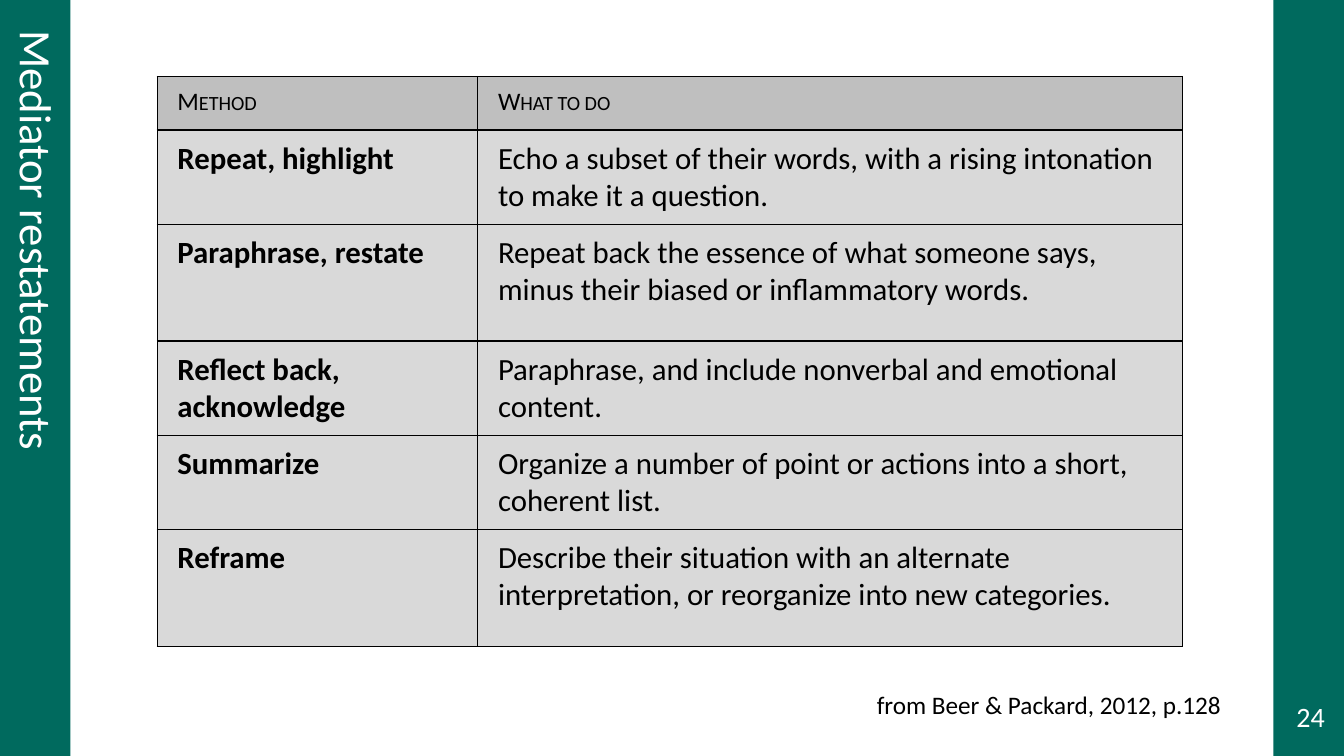
from lxml import etree
from pptx import Presentation
from pptx.dml.color import RGBColor
from pptx.enum import shapes, text
from pptx.oxml import ns
from pptx.util import Inches, Pt

GREEN = RGBColor(0x00, 0x6A, 0x5E)
WHITE = RGBColor(0xFF, 0xFF, 0xFF)
BLACK = RGBColor(0x00, 0x00, 0x00)
HEADER_GRAY = RGBColor(0xBF, 0xBF, 0xBF)
BODY_GRAY = RGBColor(0xD9, 0xD9, 0xD9)

WIDTH, HEIGHT, BAND = 13.33, 7.5, 0.7
COLUMNS = [3.18, 6.99]
HEADER_ROW, TWO_LINES, TALL = 0.53, 0.93, 1.16
ROWS = [
    (HEADER_ROW, "Method", "What to do"),
    (TWO_LINES, "Repeat, highlight",
     "Echo a subset of their words, with a rising intonation to make it a question."),
    (TALL, "Paraphrase, restate",
     "Repeat back the essence of what someone says, minus their biased or inflammatory words."),
    (TWO_LINES, "Reflect back, acknowledge",
     "Paraphrase, and include nonverbal and emotional content."),
    (TWO_LINES, "Summarize",
     "Organize a number of point or actions into a short, coherent list."),
    (TALL, "Reframe",
     "Describe their situation with an alternate interpretation, or reorganize into new categories."),
]


def set_font(p, size, color, bold=False):
    p.font.name = "Calibri"
    p.font.size = Pt(size)
    p.font.bold = bold
    p.font.color.rgb = color


def add_band(s, left):
    sp = s.shapes.add_shape(shapes.MSO_SHAPE.RECTANGLE, Inches(left), 0,
                            Inches(BAND), Inches(HEIGHT))
    sp.shadow.inherit = False
    sp.fill.solid()
    sp.fill.fore_color.rgb = GREEN
    sp.line.fill.background()


def add_label(s, box, words, size, color, align=text.PP_ALIGN.LEFT, rotation=0):
    sp = s.shapes.add_textbox(*map(Inches, box))
    sp.rotation = rotation
    tf = sp.text_frame
    tf.word_wrap = True
    p = tf.paragraphs[0]
    p.text = words
    p.alignment = align
    set_font(p, size, color)


def add_borders(cell):
    """Draw a thin black line on all four sides, placed before the cell's fill."""
    tc_pr = cell._tc.get_or_add_tcPr()
    for i, side in enumerate(("a:lnL", "a:lnR", "a:lnT", "a:lnB")):
        ln = etree.Element(ns.qn(side), w=str(Pt(1)))
        fill = etree.SubElement(ln, ns.qn("a:solidFill"))
        etree.SubElement(fill, ns.qn("a:srgbClr"), val=str(BLACK))
        tc_pr.insert(i, ln)


def fill_cell(cell, words, header, bold):
    cell.margin_left = cell.margin_right = Inches(0.2)
    cell.margin_top = cell.margin_bottom = Inches(0.1)
    cell.fill.solid()
    cell.fill.fore_color.rgb = HEADER_GRAY if header else BODY_GRAY
    p = cell.text_frame.paragraphs[0]
    p.text = words
    set_font(p, 18 if header else 22, BLACK, bold)
    if header:
        p.font._rPr.set("cap", "small")
    add_borders(cell)


def add_methods_table(s, left, top):
    height = sum(row[0] for row in ROWS)
    table = s.shapes.add_table(len(ROWS), len(COLUMNS), Inches(left), Inches(top),
                               Inches(sum(COLUMNS)), Inches(height)).table
    table.horz_banding = False
    for column, width in zip(table.columns, COLUMNS):
        column.width = Inches(width)
    for r, (row_height, *words) in enumerate(ROWS):
        table.rows[r].height = Inches(row_height)
        for c, word in enumerate(words):
            fill_cell(table.cell(r, c), word, header=r == 0, bold=r > 0 and c == 0)


def main():
    prs = Presentation()
    prs.slide_width, prs.slide_height = Inches(WIDTH), Inches(HEIGHT)
    s = prs.slides.add_slide(prs.slide_layouts[6])
    add_band(s, WIDTH - BAND)
    add_band(s, 0)
    add_label(s, (12.7, 6.89, 0.6, 0.4), "24", 20, WHITE, text.PP_ALIGN.CENTER)
    add_label(s, (-2.89, 3.14, 6.52, 0.64), "Mediator restatements", 32, WHITE, rotation=90)
    add_methods_table(s, 1.56, 0.76)
    add_label(s, (8.13, 6.79, 4.08, 0.4), "from Beer & Packard, 2012, p.128", 18, BLACK,
              text.PP_ALIGN.RIGHT)
    prs.save("out.pptx")


if __name__ == "__main__":
    main()
